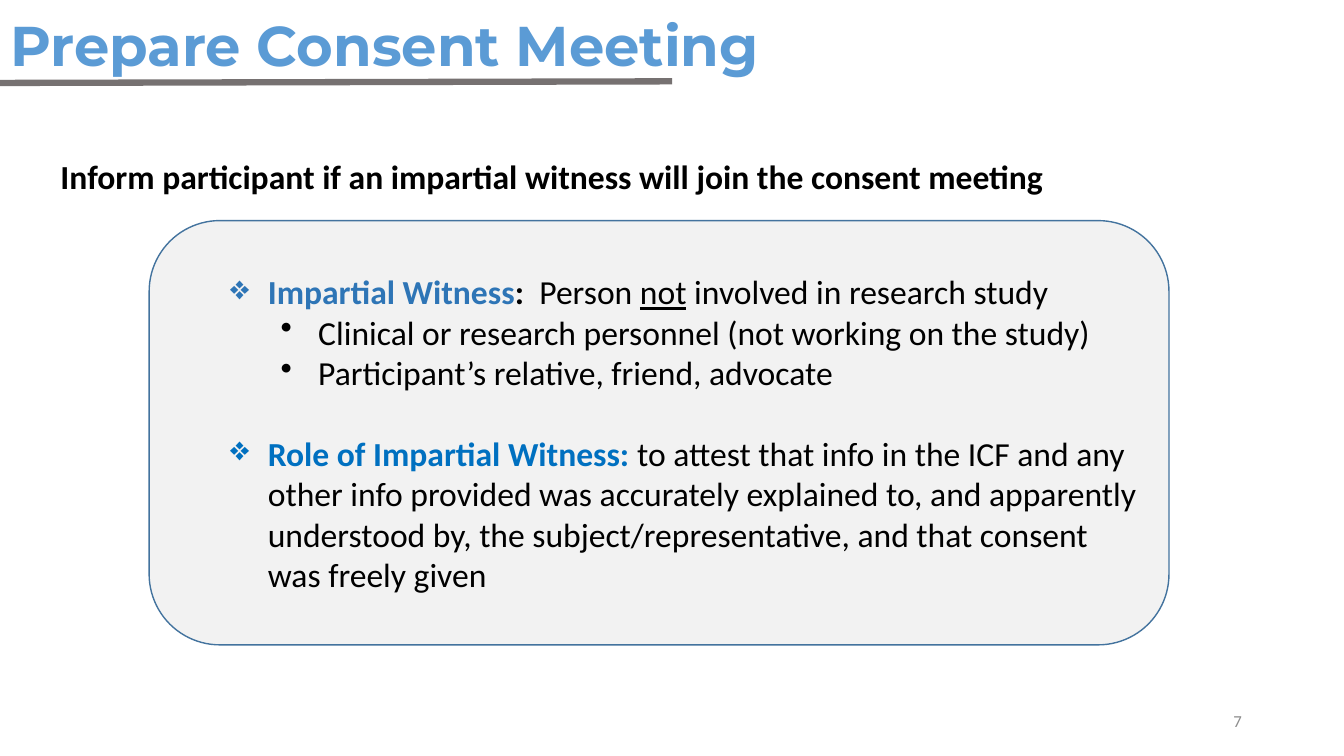
from lxml import etree
from pptx import Presentation
from pptx.dml.color import RGBColor
from pptx.enum.shapes import MSO_CONNECTOR, MSO_SHAPE
from pptx.enum.text import MSO_ANCHOR, MSO_AUTO_SIZE, PP_ALIGN
from pptx.oxml.ns import qn
from pptx.util import Cm, Pt

LEFT, RIGHT = PP_ALIGN.LEFT, PP_ALIGN.RIGHT
TOP, MIDDLE = MSO_ANCHOR.TOP, MSO_ANCHOR.MIDDLE
NO_AUTOSIZE = MSO_AUTO_SIZE.NONE
STRAIGHT = MSO_CONNECTOR.STRAIGHT
ROUNDED = MSO_SHAPE.ROUNDED_RECTANGLE

COLORS = {
    "title": "5B9BD5", "rule": "767171", "text": "000000", "number": "8C8C8C",
    "card": "F2F2F2", "border": "43739E", "witness": "2E75B6", "role": "0070C0",
}

# Each item: bullet, indent in cm, space before in points, runs of (text, style)
CARD_ITEMS = [
    ("❖", 2.22, 0, [("Impartial Witness", {"color": "witness", "bold": True}),
                    (":  ", {"bold": True}), ("Person ", {}),
                    ("not", {"underline": True}),
                    (" involved in research study", {})]),
    ("•", 3.49, 0, [("Clinical or research personnel (not working on the study)", {})]),
    ("•", 3.49, 0, [("Participant’s relative, friend, advocate", {})]),
    ("❖", 2.22, 29, [("Role of Impartial Witness: ", {"color": "role", "bold": True}),
                     ("to attest that info in the ICF and any other info provided was "
                      "accurately explained to, and apparently understood by, the "
                      "subject/representative, and that consent was freely given", {})]),
]


class ConsentSlide:
    heading_font = "Montserrat"
    body_font = "Calibri"
    body_size = 24
    hanging = 0.95

    def __init__(self, presentation):
        self.slide = presentation.slides.add_slide(presentation.slide_layouts[1])

    def color(self, name):
        return RGBColor.from_string(COLORS[name])

    def place(self, shape, left, top, width, height):
        shape.left, shape.top = Cm(left), Cm(top)
        shape.width, shape.height = Cm(width), Cm(height)

    def frame(self, shape, anchor):
        frame = shape.text_frame
        frame.word_wrap = True
        frame.auto_size = NO_AUTOSIZE
        frame.vertical_anchor = anchor
        return frame

    def format(self, paragraph, font_name, size, color, bold=False, align=LEFT):
        paragraph.alignment = align
        paragraph.space_before = Pt(0)
        font = paragraph.font
        font.name, font.size, font.bold = font_name, Pt(size), bold
        font.color.rgb = self.color(color)

    def bullet(self, paragraph, character, indent, hanging):
        properties = paragraph._p.get_or_add_pPr()
        properties.set("marL", str(Cm(indent)))
        properties.set("indent", str(-Cm(hanging)))
        if character:
            mark = etree.Element(qn("a:buChar"), char=character)
        else:
            mark = etree.Element(qn("a:buNone"))
        properties.find(qn("a:defRPr")).addprevious(mark)

    def title(self, text, *box):
        shape = self.slide.shapes.title
        self.place(shape, *box)
        frame = self.frame(shape, TOP)
        frame.text = text
        self.format(frame.paragraphs[0], self.heading_font, 40, "title", True)

    def statement(self, text, *box):
        shape = self.slide.placeholders[1]
        self.place(shape, *box)
        frame = self.frame(shape, TOP)
        frame.margin_top = Cm(1.14)
        frame.text = text
        paragraph = frame.paragraphs[0]
        self.format(paragraph, self.body_font, self.body_size, "text", True)
        self.bullet(paragraph, None, 1.27, 0)

    def rule(self, x1, y1, x2, y2):
        line = self.slide.shapes.add_connector(STRAIGHT, Cm(x1), Cm(y1), Cm(x2), Cm(y2))
        line.line.color.rgb = self.color("rule")
        line.line.width = Pt(4.5)
        etree.SubElement(line._element.spPr, qn("a:effectLst"))

    def card(self, items, *box):
        shape = self.slide.shapes.add_shape(ROUNDED, *map(Cm, box))
        shape.shadow.inherit = False
        shape.fill.solid()
        shape.fill.fore_color.rgb = self.color("card")
        shape.line.color.rgb = self.color("border")
        shape.line.width = Pt(1)
        frame = self.frame(shape, MIDDLE)
        for index, (character, indent, space, runs) in enumerate(items):
            paragraph = frame.add_paragraph() if index else frame.paragraphs[0]
            self.format(paragraph, self.body_font, self.body_size, "text")
            paragraph.space_before = Pt(space)
            self.bullet(paragraph, character, indent, self.hanging)
            for text, style in runs:
                run = paragraph.add_run()
                run.text = text
                run.font.bold = style.get("bold")
                run.font.underline = style.get("underline")
                if "color" in style:
                    run.font.color.rgb = self.color(style["color"])

    def page_number(self, number, *box):
        shape = self.slide.shapes.add_textbox(*map(Cm, box))
        frame = self.frame(shape, MIDDLE)
        frame.text = str(number)
        self.format(frame.paragraphs[0], self.body_font, 12, "number", align=RIGHT)


def main():
    presentation = Presentation()
    presentation.slide_width, presentation.slide_height = Cm(33.87), Cm(19.05)
    page = ConsentSlide(presentation)

    # Heading with its rule
    page.title("Prepare Consent Meeting", 0, 0.13, 33.87, 1.96)
    page.rule(0, 2.09, 16.94, 2.05)

    # Statement and witness card
    page.statement("Inform participant if an impartial witness will join the consent meeting",
                   0, 2.79, 31.14, 4.37)
    page.card(CARD_ITEMS, 3.76, 5.56, 25.7, 10.69)

    # Footer
    page.page_number(7, 23.93, 17.65, 7.62, 1.02)

    presentation.save("out.pptx")


if __name__ == "__main__":
    main()
